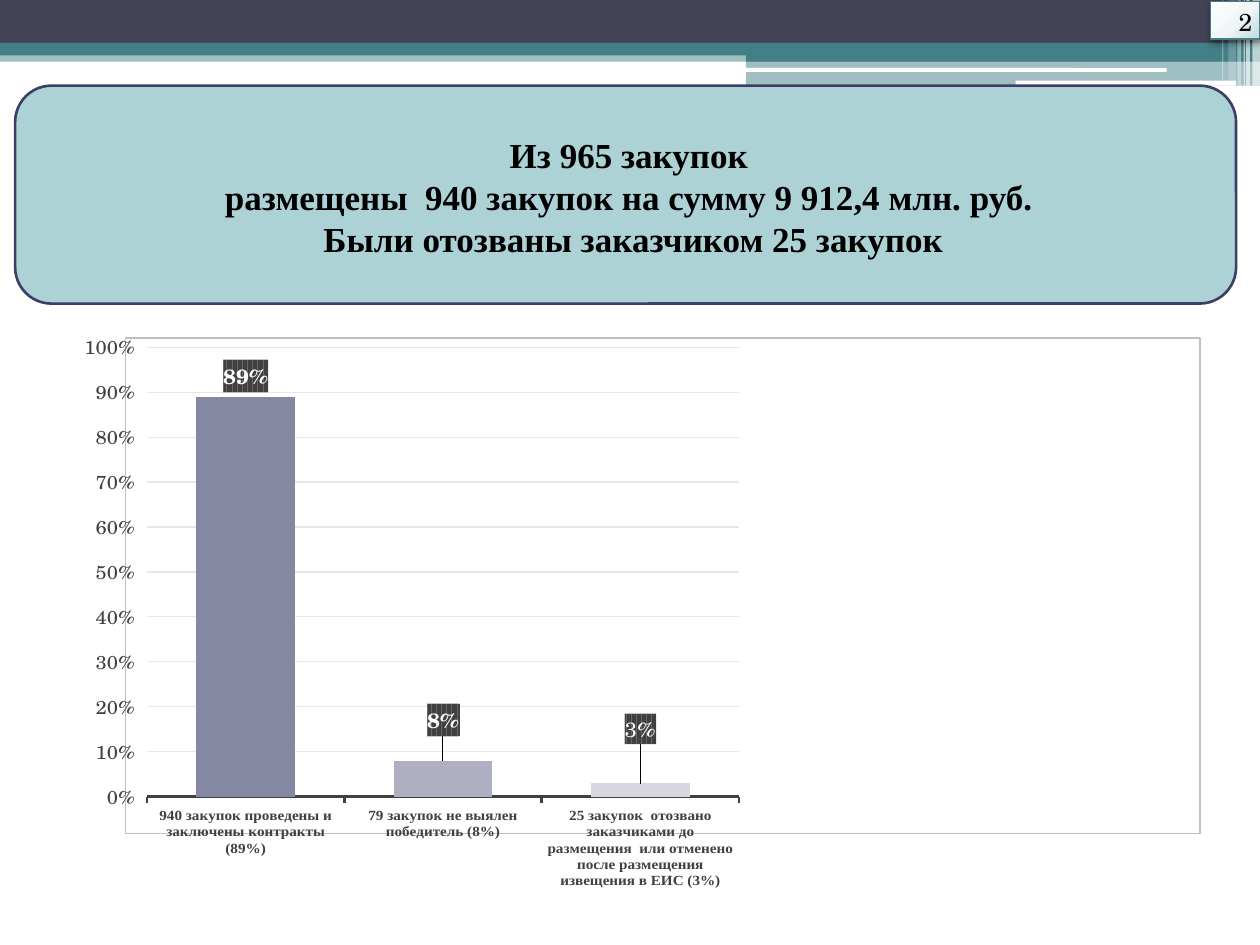
from lxml import etree
from pptx import Presentation
from pptx.chart.data import CategoryChartData
from pptx.dml.color import RGBColor
from pptx.enum.chart import XL_CHART_TYPE, XL_LABEL_POSITION, XL_TICK_MARK
from pptx.enum.shapes import MSO_SHAPE
from pptx.enum.text import MSO_ANCHOR, PP_ALIGN
from pptx.oxml import parse_xml
from pptx.util import Pt

RECT, ROUND = MSO_SHAPE.RECTANGLE, MSO_SHAPE.ROUNDED_RECTANGLE
COLUMN = XL_CHART_TYPE.COLUMN_CLUSTERED
ABOVE = XL_LABEL_POSITION.OUTSIDE_END
OUT = XL_TICK_MARK.OUTSIDE
MIDDLE, TOP = MSO_ANCHOR.MIDDLE, MSO_ANCHOR.TOP
CENTER = PP_ALIGN.CENTER

PX = 9144
A = "http://schemas.openxmlformats.org/drawingml/2006/main"
C = "http://schemas.openxmlformats.org/drawingml/2006/chart"
NS = f'xmlns:a="{A}" xmlns:c="{C}"'
THEME = {
    "dark": "424456", "teal": "438086", "white": "FFFFFF", "black": "000000",
    "panel": "ADD2D6", "edge": "3D3E66", "axis": "404040", "grid": "E7E7E7",
    "frame": "BFBFBF", "bars": ["8588A2", "AEB0C1", "D6D7E0"],
    "serif": "Times New Roman", "book": "TeX Gyre Schola",
    "title": 20, "page": 14, "label": 13.3, "scale": 12, "base": 10, "cat": 9,
}


def block(x, y, w, h, color, kind=RECT, alpha=100):
    shape = slide.shapes.add_shape(kind, x * PX, y * PX, w * PX, h * PX)
    shape.shadow.inherit = False
    shape.line.fill.background()
    shape.fill.solid()
    shape.fill.fore_color.rgb = RGBColor.from_string(THEME[color])
    if alpha < 100:
        tone = shape.fill._xPr.find(f".//{{{A}}}srgbClr")
        etree.SubElement(tone, f"{{{A}}}alpha", val=str(alpha * 1000))
    return shape


def style(font, size, face, color, bold=False):
    font.size = Pt(THEME[size])
    font.name = THEME[face]
    font.color.rgb = RGBColor.from_string(THEME[color])
    font.bold = bold


deck = Presentation()
deck.slide_width, deck.slide_height = 1000 * PX, 750 * PX
slide = deck.slides.add_slide(deck.slide_layouts[6])

block(0, 40, 1000, 9, "teal", alpha=50)
block(0, 0, 1000, 34, "dark")
block(0, 34, 1000, 10, "teal")
block(592, 39, 408, 10, "teal")
block(592, 48, 408, 20, "teal", alpha=50)
block(591, 54, 335, 3, "white", ROUND)
block(806, 64, 175, 4, "white", ROUND)
for x, w, h, alpha in [(994, 6, 68, 65), (989, 3, 68, 65), (987, 1, 68, 60),
                       (982, 3, 68, 40), (975, 6, 64, 20), (970, 1, 64, 30)]:
    block(x, 0, w, h, "white", alpha=alpha)

panel = block(12, 68, 969, 173, "panel", ROUND)
panel.line.color.rgb = RGBColor.from_string(THEME["edge"])
panel.line.width = Pt(1.5)
frame = panel.text_frame
frame.word_wrap = True
frame.vertical_anchor = MIDDLE
frame.margin_left = 22 * PX
frame.margin_top = 8 * PX
frame.text = ("Из 965 закупок \n"
              "размещены  940 закупок на сумму 9 912,4 млн. руб. \n"
              "Были отозваны заказчиком 25 закупок")
for para in frame.paragraphs:
    para.alignment = CENTER
    para.line_spacing = Pt(24)
    style(para.runs[0].font, "title", "serif", "black", True)

data = CategoryChartData(number_format="0%")
data.categories = [
    "940 закупок проведены и заключены контракты (89%)",
    "79 закупок не выялен победитель (8%)",
    "25 закупок  отозвано заказчиками до размещения  "
    "или отменено после размещения извещения в ЕИС (3%)",
]
data.add_series("Series 1", [0.89, 0.08, 0.03])
chart = slide.shapes.add_chart(
    COLUMN, 67 * PX, 265 * PX, 886 * PX, 441 * PX, data).chart
chart.has_legend = False
chart.has_title = False
style(chart.font, "base", "book", "black")
root = chart.element
root.find(f"{{{C}}}txPr").addprevious(parse_xml(
    f'<c:spPr {NS}><a:solidFill><a:srgbClr val="{THEME["white"]}"/></a:solidFill>'
    f'<a:ln w="9525"><a:solidFill><a:srgbClr val="{THEME["frame"]}"/>'
    '</a:solidFill></a:ln></c:spPr>'))

area = root.find(f".//{{{C}}}plotArea")
for old in area.findall(f"{{{C}}}layout"):
    area.remove(old)
area.insert(0, parse_xml(
    f'<c:layout {NS}><c:manualLayout><c:layoutTarget val="inner"/>'
    '<c:xMode val="edge"/><c:yMode val="edge"/><c:x val="0.02"/>'
    '<c:y val="0.019"/><c:w val="0.551"/><c:h val="0.907"/>'
    '</c:manualLayout></c:layout>'))

base = chart.category_axis
base.major_tick_mark = OUT
base.format.line.color.rgb = RGBColor.from_string(THEME["axis"])
base.format.line.width = Pt(1.5)
style(base.tick_labels.font, "cat", "serif", "axis", True)

scale = chart.value_axis
scale.minimum_scale, scale.maximum_scale, scale.major_unit = 0, 1, 0.1
scale.major_tick_mark = OUT
scale.format.line.fill.background()
scale.tick_labels.number_format = "0%"
scale.tick_labels.number_format_is_linked = False
style(scale.tick_labels.font, "scale", "book", "axis")
grid = scale.major_gridlines.format.line
grid.color.rgb = RGBColor.from_string(THEME["grid"])
grid.width = Pt(0.75)

plot = chart.plots[0]
plot.gap_width = 100
plot.vary_by_categories = False
bars = plot.series[0]
bars.format.fill.solid()
bars.format.fill.fore_color.rgb = RGBColor.from_string(THEME["bars"][1])
for i, color in enumerate(THEME["bars"]):
    point = bars.points[i]
    point.format.fill.solid()
    point.format.fill.fore_color.rgb = RGBColor.from_string(color)
    style(point.data_label.font, "label", "book", "white", i < 2)
    point.data_label.position = ABOVE

for label, lift in zip(root.iter(f"{{{C}}}dLbl"), [0, -0.04, -0.07]):
    label.find(f"{{{C}}}idx").addnext(parse_xml(
        f'<c:layout {NS}><c:manualLayout><c:x val="0"/><c:y val="{lift}"/>'
        '</c:manualLayout></c:layout>'))
    text = label.find(f"{{{C}}}txPr")
    for old in label.findall(f"{{{C}}}spPr"):
        label.remove(old)
    text.addprevious(parse_xml(
        f'<c:numFmt {NS} formatCode="0%" sourceLinked="0"/>'))
    text.addprevious(parse_xml(
        f'<c:spPr {NS}><a:pattFill prst="dkVert">'
        '<a:fgClr><a:srgbClr val="404040"/></a:fgClr>'
        '<a:bgClr><a:srgbClr val="656565"/></a:bgClr></a:pattFill></c:spPr>'))

page = block(961, 1, 39, 30, "white")
page.line.color.rgb = RGBColor.from_string(THEME["teal"])
page.line.width = Pt(0.75)
props = page.element.spPr
solid = props.find(f"{{{A}}}solidFill")
stops = "".join(f'<a:gs pos="{pos}000"><a:srgbClr val="{color}"/></a:gs>'
                for pos, color in [(0, "FEFEFE"), (55, "F0F6F6"), (100, "BFD9DD")])
props.replace(solid, parse_xml(
    f'<a:gradFill {NS}><a:gsLst>{stops}</a:gsLst><a:path path="circle">'
    '<a:fillToRect l="-40000" t="-90000" r="140000" b="190000"/>'
    '</a:path></a:gradFill>'))
props.find(f"{{{A}}}effectLst").append(parse_xml(
    f'<a:outerShdw {NS} blurRad="52000" dist="25400" dir="5400000">'
    '<a:srgbClr val="000000"><a:alpha val="40000"/></a:srgbClr></a:outerShdw>'))
frame = page.text_frame
frame.vertical_anchor = TOP
frame.margin_left = 22 * PX
frame.text = "2"
frame.paragraphs[0].alignment = CENTER
style(frame.paragraphs[0].runs[0].font, "page", "book", "black")

deck.save("out.pptx")
